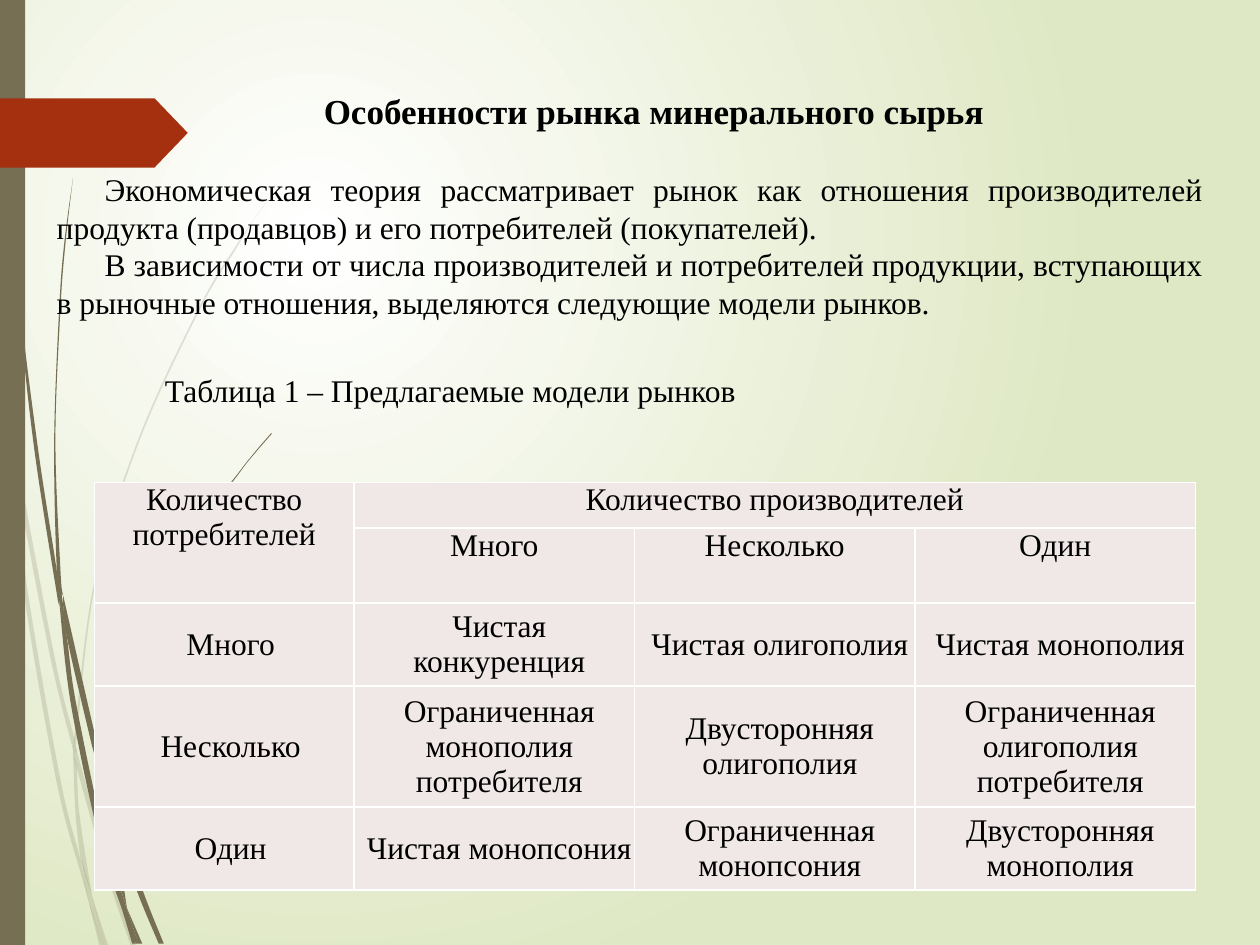
import pptx
import pptx.dml.color
import pptx.enum.dml
import pptx.enum.shapes
import pptx.enum.text
import pptx.oxml
import pptx.oxml.ns
import pptx.util

COLORS = {"text": "000000", "olive": "766F54", "red": "A53010", "cell": "F0E8E7",
          "white": "FFFFFF", "green": "DFE8C4"}
COLUMNS, ROWS = 1000, 750
XMLNS = pptx.oxml.ns.nsdecls("a")
CENTER = pptx.enum.text.PP_ALIGN.CENTER
JUSTIFY = pptx.enum.text.PP_ALIGN.JUSTIFY
TOP = pptx.enum.text.MSO_ANCHOR.TOP
MIDDLE = pptx.enum.text.MSO_ANCHOR.MIDDLE

# Grass blades: one edge, then the other edge back, in grid columns and rows
PALE_BLADES = [
    ([(8, 350), (6, 322), (0, 282)], [(0, 299), (7, 344)]),
    ([(10, 345), (43, 520), (59, 586)], [(59, 599), (40, 522), (12, 376)]),
    ([(61, 596), (64, 607), (88, 692), (108, 751)], [(104, 751), (85, 694), (61, 610)]),
    ([(73, 711), (86, 751)], [(83, 751), (73, 711)]),
    ([(8, 350), (12, 376), (22, 469), (48, 619), (64, 683), (70, 714)],
     [(64, 693), (45, 621), (19, 470), (8, 350)]),
    ([(58, 599), (61, 610), (63, 646), (73, 711)], [(64, 683), (60, 646), (58, 599)]),
    ([(217, 153), (201, 175), (187, 198), (159, 245), (111, 349), (76, 462), (61, 584), (61, 596)],
     [(59, 586), (59, 584), (75, 461), (110, 348), (158, 244), (186, 197), (201, 175), (217, 153)]),
    ([(70, 714), (82, 751)], [(79, 751), (70, 714)]),
    ([(59, 586), (61, 596), (61, 610)], [(58, 599), (59, 586)]),
    ([(65, 683), (73, 711), (83, 751)], [(82, 751), (70, 714), (65, 683)]),
]
DARK_BLADES = [
    ([(3, 0), (4, 48), (6, 109), (15, 232), (30, 355), (45, 453), (47, 481)],
     [(46, 477), (27, 355), (14, 233), (5, 110), (3, 48), (2, 0)]),
    ([(50, 472), (77, 590), (88, 631), (88, 645)], [(73, 592), (53, 505), (50, 472)]),
    ([(91, 641), (94, 649), (113, 706), (130, 749)], [(126, 749), (109, 708), (91, 656)]),
    ([(47, 477), (53, 505), (60, 556), (81, 657), (91, 691), (97, 722)],
     [(92, 708), (77, 659), (56, 557), (47, 477)]),
    ([(58, 141), (52, 193), (48, 245), (44, 349), (48, 453), (50, 472)],
     [(49, 472), (45, 449), (43, 349), (47, 245), (51, 193), (58, 141)]),
    ([(100, 719), (113, 749)], [(110, 749), (100, 719)]),
    ([(45, 449), (49, 472), (53, 505)], [(47, 477), (45, 453)]),
    ([(216, 344), (203, 359), (191, 374), (169, 406), (131, 476), (103, 552), (91, 633), (91, 641)],
     [(88, 631), (101, 551), (129, 474), (168, 405), (191, 373), (203, 358), (215, 344)]),
    ([(97, 722), (108, 749)], [(105, 749), (97, 722)]),
    ([(88, 645), (91, 656), (100, 716), (100, 719)], [(96, 706), (91, 691), (88, 645)]),
    ([(88, 631), (91, 641), (91, 656)], [(88, 645), (88, 631)]),
    ([(91, 691), (100, 719), (110, 749)], [(108, 749), (97, 722), (91, 691)]),
]
MODELS = [
    ["Количество потребителей", "Количество производителей", "", ""],
    ["", "Много", "Несколько", "Один"],
    ["Много", "Чистая конкуренция", "Чистая олигополия", "Чистая монополия"],
    ["Несколько", "Ограниченная монополия потребителя", "Двусторонняя олигополия",
     "Ограниченная олигополия потребителя"],
    ["Один", "Чистая монопсония", "Ограниченная монопсония", "Двусторонняя монополия"],
]


def bezier_segments(anchors):
    """Two handles and an end point for each stretch of a smooth curve."""
    ends = [anchors[0], *anchors, anchors[-1]]
    return [[tuple(q + (r - p) / 6 for p, q, r in zip(a, b, c)),
             tuple(r - (s - q) / 6 for q, r, s in zip(b, c, d)), c]
            for a, b, c, d in zip(ends, ends[1:], ends[2:], ends[3:])]


class SlideBuilder:
    font, size = "Times New Roman", 18

    def __init__(self, deck):
        self.column = deck.slide_width / COLUMNS
        self.row = deck.slide_height / ROWS
        self.slide = deck.slides.add_slide(deck.slide_layouts[1])
        self.shapes = self.slide.shapes

    def color(self, name):
        return pptx.dml.color.RGBColor.from_string(COLORS[name])

    def area(self, left, top, width, height):
        return [round(v * unit) for v, unit in
                zip((left, top, width, height), (self.column, self.row) * 2)]

    def background(self):
        fill = self.slide.background.fill
        fill.gradient()
        for stop, name, place in zip(fill.gradient_stops, ("white", "green"), (0, 1)):
            stop.color.rgb, stop.position = self.color(name), place
        linear = self.slide._element.find(".//" + pptx.oxml.ns.qn("a:lin"))
        linear.getparent().replace(linear, pptx.oxml.parse_xml(
            f'<a:path {XMLNS} path="circle">'
            '<a:fillToRect l="50000" t="50000" r="100000" b="100000"/></a:path>'))

    def paint(self, shape, color, opacity=100):
        shape.shadow.inherit = False
        shape.line.fill.background()
        shape.fill.solid()
        shape.fill.fore_color.rgb = self.color(color)
        if opacity < 100:
            rgb = shape._element.spPr.find(".//" + pptx.oxml.ns.qn("a:srgbClr"))
            rgb.append(pptx.oxml.parse_xml(f'<a:alpha {XMLNS} val="{opacity * 1000}"/>'))

    def block(self, kind, at, color):
        shape = self.shapes.add_shape(kind, *self.area(*at))
        self.paint(shape, color)
        return shape

    def blade(self, edges, opacity):
        down, up = [[(x * self.column, y * self.row) for x, y in edge] for edge in edges]
        builder = self.shapes.build_freeform(*down[0], scale=1.0)
        builder.add_line_segments(down[1:] + up, close=True)
        shape = builder.convert_to_shape()
        # Bend each side; the line that joins the two sides stays straight
        segments = bezier_segments(down) + [None] + bezier_segments(up)
        lines = list(shape._element.spPr.iter(pptx.oxml.ns.qn("a:lnTo")))
        for line, segment in zip(lines, segments):
            if segment:
                points = "".join(f'<a:pt x="{round(x - shape.left)}" y="{round(y - shape.top)}"/>'
                                 for x, y in segment)
                line.getparent().replace(line, pptx.oxml.parse_xml(
                    f"<a:cubicBezTo {XMLNS}>{points}</a:cubicBezTo>"))
        self.paint(shape, "olive", opacity)

    def format(self, paragraph, align=None, size=size, bold=False, margin=0, indent=0):
        paragraph.alignment = align
        paragraph.space_before = pptx.util.Pt(0)
        properties = paragraph._p.get_or_add_pPr()
        properties.set("marL", str(round(margin * self.column)))
        properties.set("indent", str(round(indent * self.column)))
        for run in paragraph.runs:
            run.font.name, run.font.size = self.font, pptx.util.Pt(size)
            run.font.bold, run.font.color.rgb = bold, self.color("text")

    def placeholder(self, index, at, text, anchor, spacing=None, **style):
        holder = self.slide.placeholders[index]
        holder.left, holder.top, holder.width, holder.height = self.area(*at)
        self.shapes._spTree.append(holder._element)  # bring to the front
        frame = holder.text_frame
        frame.text = text
        frame.vertical_anchor = anchor
        frame.auto_size = pptx.enum.text.MSO_AUTO_SIZE.NONE
        for paragraph in frame.paragraphs:
            self.format(paragraph, **style)
            paragraph.line_spacing = spacing
            paragraph._p.get_or_add_pPr().append(pptx.oxml.parse_xml(f"<a:buNone {XMLNS}/>"))

    def caption(self, at, text):
        frame = self.shapes.add_textbox(*self.area(*at)).text_frame
        frame.word_wrap = False
        frame.vertical_anchor = MIDDLE
        frame.text = text
        self.format(frame.paragraphs[0])

    def table(self, left, top, widths, heights, rows):
        at = self.area(left, top, sum(widths), sum(heights))
        table = self.shapes.add_table(len(rows), len(widths), *at).table
        table.first_row = table.horz_banding = False
        for column, width in zip(table.columns, widths):
            column.width = round(width * self.column)
        for row, height in zip(table.rows, heights):
            row.height = round(height * self.row)
        for r, texts in enumerate(rows):
            for c, text in enumerate(texts):
                self.cell(table.cell(r, c), text, header=r < 2, margin=8 if c else 10)
        return table

    def cell(self, cell, text, header, margin):
        cell.text = text
        cell.margin_left = cell.margin_right = round(2 * self.column)
        cell.margin_top = cell.margin_bottom = 0
        cell.vertical_anchor = TOP if header else MIDDLE
        self.format(cell.text_frame.paragraphs[0], CENTER, margin=0 if header else margin)
        properties = cell._tc.get_or_add_tcPr()
        for side in ("lnL", "lnR", "lnT", "lnB"):
            properties.append(pptx.oxml.parse_xml(
                f'<a:{side} {XMLNS} w="12700"><a:solidFill>'
                f'<a:srgbClr val="{COLORS["white"]}"/></a:solidFill></a:{side}>'))
        cell.fill.solid()
        cell.fill.fore_color.rgb = self.color("cell")


def main():
    deck = pptx.Presentation()
    deck.slide_width, deck.slide_height = pptx.util.Inches(10), pptx.util.Inches(7.5)
    page = SlideBuilder(deck)

    # Backdrop: gradient, grass, side bar and arrow tab
    page.background()
    for blades, opacity in ((PALE_BLADES, 20), (DARK_BLADES, 100)):
        for edges in blades:
            page.blade(edges, opacity)
    preset = pptx.enum.shapes.MSO_SHAPE
    page.block(preset.RECTANGLE, (0, 0, 20, ROWS), "olive")
    tab = page.block(preset.PENTAGON, (0, 78, 149, 55), "red")
    tab.adjustments[0] = 0.48

    # Heading and introduction
    page.placeholder(0, (35, 67.5, 930, 40), "Особенности рынка минерального сырья",
                     MIDDLE, align=CENTER, size=20, bold=True, indent=38)
    page.placeholder(1, (35, 130, 930, 132), "\n".join([
        "Экономическая теория рассматривает рынок как отношения производителей продукта "
        "(продавцов) и его потребителей (покупателей).",
        "В зависимости от числа производителей и потребителей продукции, вступающих "
        "в рыночные отношения, выделяются следующие модели рынков."]),
        TOP, spacing=pptx.util.Pt(21.5), align=JUSTIFY, indent=38)

    # Market models
    models = page.table(75, 383, [206] + [222.6] * 3, [36, 59.5, 66, 96, 66], MODELS)
    models.cell(0, 0).merge(models.cell(1, 0))
    models.cell(0, 1).merge(models.cell(0, 3))
    page.caption((121, 259, 478, 101), "Таблица 1 – Предлагаемые модели рынков")

    deck.save("out.pptx")


if __name__ == "__main__":
    main()
